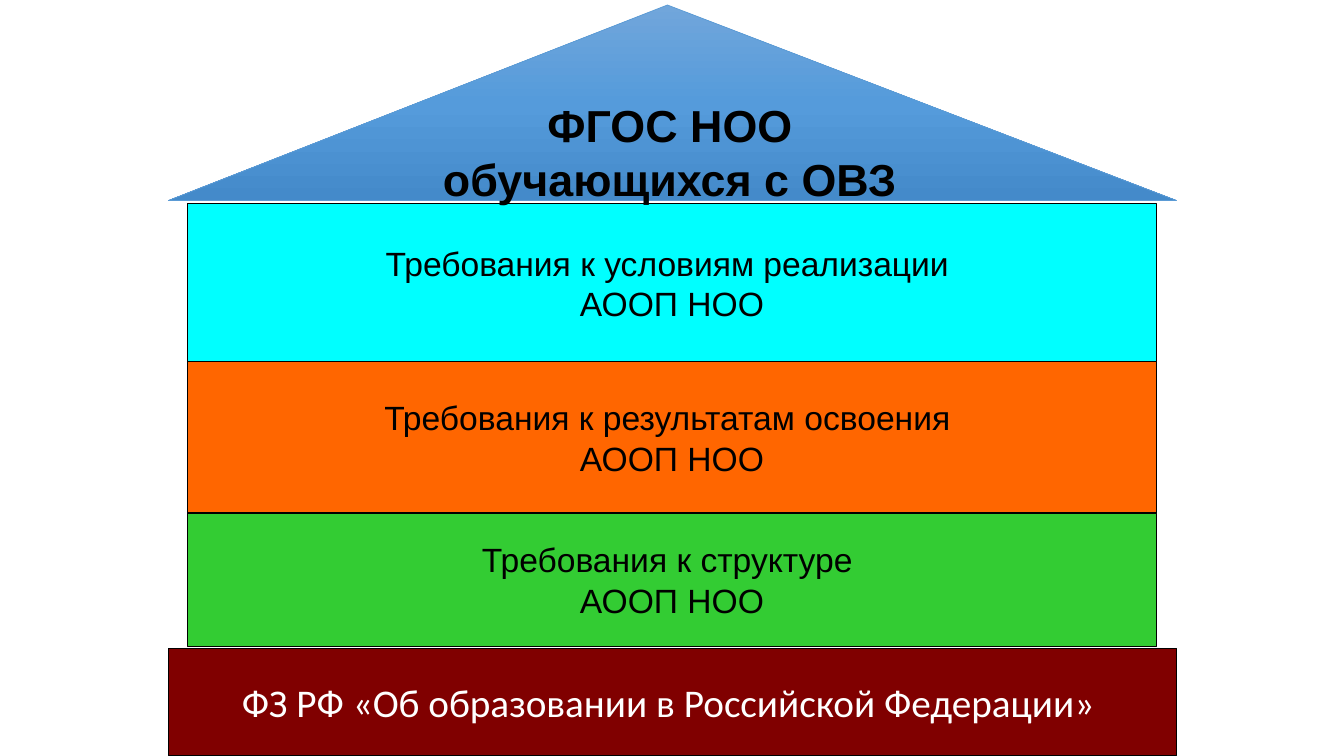
from copy import deepcopy
from pptx import Presentation
from pptx.dml.color import RGBColor
from pptx.enum.shapes import MSO_SHAPE
from pptx.enum.text import MSO_ANCHOR, PP_ALIGN
from pptx.oxml.ns import qn
from pptx.util import Inches, Pt

WIDE, HIGH = 13.33, 7.5
BLACK = RGBColor(0x00, 0x00, 0x00)
WHITE = RGBColor(0xFF, 0xFF, 0xFF)
MAROON = RGBColor(0x80, 0x00, 0x00)
CYAN = RGBColor(0x00, 0xFF, 0xFF)
ORANGE = RGBColor(0xFF, 0x66, 0x00)
GREEN = RGBColor(0x33, 0xCC, 0x33)
EDGE = RGBColor(0x5B, 0x9B, 0xD5)
SHADES = (RGBColor(0x71, 0xA6, 0xDB), RGBColor(0x55, 0x9B, 0xDB),
          RGBColor(0x44, 0x8A, 0xCA))

OUTER = (1.67, 10)
INNER = (1.86, 9.61)
FLOORS = [
    ("Требования к условиям реализации ", CYAN, 1.57),
    ("Требования к результатам освоения ", ORANGE, 1.5),
    ("Требования к структуре ", GREEN, 1.32),
]


def add_part(slide, kind, span, top, high, edge, weight):
    left, wide = span
    part = slide.shapes.add_shape(
        kind, Inches(left), Inches(top), Inches(wide), Inches(high))
    part.shadow.inherit = False
    part.line.color.rgb = edge
    part.line.width = Pt(weight)
    return part


def add_text(part, lines, size, font, color, wrap=False, bold=False):
    frame = part.text_frame
    frame.word_wrap = wrap
    frame.vertical_anchor = MSO_ANCHOR.MIDDLE
    for i, line in enumerate(lines):
        para = frame.paragraphs[0] if i == 0 else frame.add_paragraph()
        para.alignment = PP_ALIGN.CENTER
        run = para.add_run()
        run.text = line
        run.font.size = Pt(size)
        run.font.name = font
        run.font.bold = bold
        run.font.color.rgb = color


def add_block(slide, span, top, high, fill, lines, size, font, color):
    block = add_part(slide, MSO_SHAPE.RECTANGLE, span, top, high, BLACK, 0.75)
    block.fill.solid()
    block.fill.fore_color.rgb = fill
    add_text(block, lines, size, font, color)


def shade(part, colors):
    fill = part.fill
    fill.gradient()
    fill.gradient_angle = 270
    stops = part._element.spPr.find(qn("a:gradFill")).find(qn("a:gsLst"))
    stops.append(deepcopy(stops[-1]))
    for i, (stop, color) in enumerate(zip(fill.gradient_stops, colors)):
        stop.position = i / (len(colors) - 1)
        stop.color.rgb = color


def add_roof(slide):
    roof = add_part(slide, MSO_SHAPE.ISOSCELES_TRIANGLE, OUTER, 0.05, 1.94,
                    EDGE, 0.5)
    roof.adjustments[0] = 0.495
    shade(roof, SHADES)
    add_text(roof, ["ФГОС НОО обучающихся с ОВЗ"], 32, "Arial", BLACK,
             wrap=True, bold=True)


def main():
    deck = Presentation()
    deck.slide_width, deck.slide_height = Inches(WIDE), Inches(HIGH)
    slide = deck.slides.add_slide(deck.slide_layouts[6])
    base = 1.07
    add_block(slide, OUTER, HIGH - base, base, MAROON,
              ["ФЗ РФ «Об образовании в Российской Федерации» "],
              28, "Calibri", WHITE)
    top = 2.02
    for text, fill, high in FLOORS:
        add_block(slide, INNER, top, high, fill, [text, "АООП НОО"],
                  24, "Arial", BLACK)
        top += high
    add_roof(slide)
    deck.save("out.pptx")


if __name__ == "__main__":
    main()
